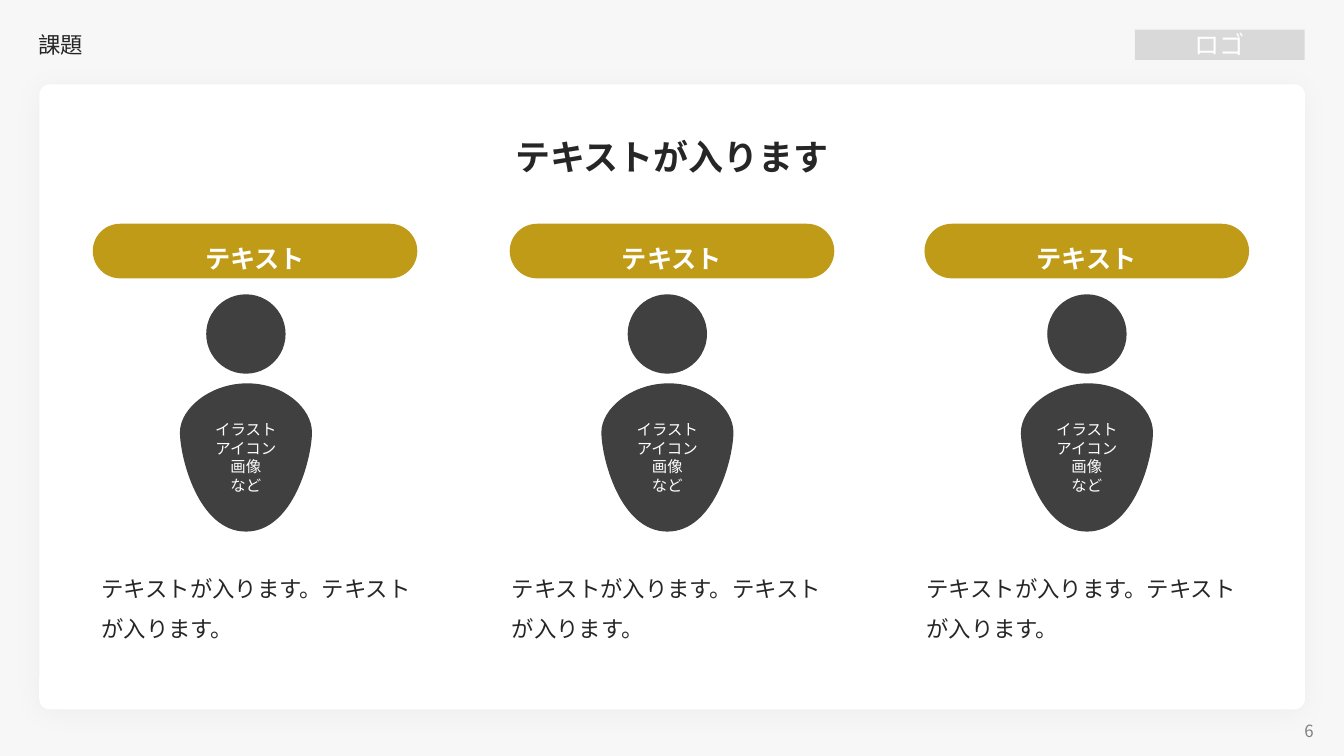
from lxml.etree import SubElement as Sub
from pptx import Presentation
from pptx.dml.color import RGBColor
from pptx.enum.shapes import MSO_SHAPE as Shape
from pptx.enum.text import MSO_ANCHOR as Anchor, PP_ALIGN as Align
from pptx.oxml.ns import qn
from pptx.util import Inches, Pt

# Grid of 160 columns by 90 rows on a 13.33 x 7.5 inch slide
COLS, ROWS = 160, 90
CELL = Inches(7.5) / ROWS

BACK = RGBColor(0xF7, 0xF7, 0xF7)
WHITE = RGBColor(0xFF, 0xFF, 0xFF)
PALE = RGBColor(0xD9, 0xD9, 0xD9)
GREY = RGBColor(0x80, 0x80, 0x80)
DARK = RGBColor(0x40, 0x40, 0x40)
INK = RGBColor(0x26, 0x26, 0x26)
GOLD = RGBColor(0xC0, 0x9B, 0x17)
SANS, LATO = "Noto Sans CJK JP", "Lato"

# Torso outline as shares of its upright box: start, then Bezier segments
START = (0.51, 0)
CURVES = [
    ((0.79, 0), (1, 0.17), (1, 0.33)),
    ((1, 0.5), (0.86, 1), (0.5, 1)),
    ((0.14, 1), (0, 0.5), (0, 0.33)),
    ((0, 0.17), (0.23, 0), START),
]


def grid(*cells):
    return [round(c * CELL) for c in cells]


def paint(shape, color):
    shape.shadow.inherit = False
    shape.fill.solid()
    shape.fill.fore_color.rgb = color
    shape.line.fill.background()


def block(parent, kind, box, color, round_by=None):
    shape = parent.shapes.add_shape(kind, *grid(*box))
    if round_by is not None:
        shape.adjustments[0] = round_by
    paint(shape, color)
    return shape


def write(shape, text, size, color, align=Align.CENTER, font=SANS,
          bold=False, space=None, anchor=Anchor.MIDDLE):
    frame = shape.text_frame
    frame.text = text
    frame.word_wrap = True
    frame.vertical_anchor = anchor
    for para in frame.paragraphs:
        para.alignment = align
        if space:
            para.line_spacing = space
        for run in para.runs:
            face = run.font
            face.size, face.bold, face.name = Pt(size), bold, font
            face.color.rgb = color
            Sub(run._r.get_or_add_rPr(), qn("a:ea"), typeface=font)


def label(slide, box, text, size, color, **style):
    write(slide.shapes.add_textbox(*grid(*box)), text, size, color, **style)


def shade(shape):
    effects = shape._element.spPr.find(qn("a:effectLst"))
    shadow = Sub(effects, qn("a:outerShdw"), blurRad=str(Pt(20)),
                 dist=str(Pt(3)), dir="5400000", algn="t", rotWithShape="0")
    tint = Sub(shadow, qn("a:srgbClr"), val="000000")
    Sub(tint, qn("a:alpha"), val="3000")


def base(slide, box):
    """Background, card and page number."""
    x, y, w, h = box
    block(slide, Shape.ROUNDED_RECTANGLE, box, BACK, 0)
    card = block(slide, Shape.ROUNDED_RECTANGLE,
                 (x + 4.68, y + 10.05, w - 9.32, h - 15.6), WHITE, 0.017)
    shade(card)
    label(slide, (x + w - 39.76, y + h - 4.38, 37.32, 2.88), "6", 12, GREY,
          align=Align.RIGHT)


def header(slide, box):
    """Section name at the left, logo block at the right."""
    x, y, w, h = box
    logo = block(slide, Shape.RECTANGLE, (x + w - 20.2, y + 0.53, 20.2, 3.6), PALE)
    write(logo, "ロゴ", 18, WHITE)
    label(slide, (x, y, 120, h), "課題", 16, INK, align=Align.LEFT, space=0.9)


def torso(group, box):
    """Curved outline lying on its side, turned upright with its text."""
    x, y, w, h = box
    left, top = x + (w - h) / 2, y + (h - w) / 2

    def turn(point):
        return h * point[1], w * (1 - point[0])

    def spot(point):
        across, down = turn(point)
        return grid(left + across, top + down)

    pen = group.shapes.build_freeform(*spot(START))
    pen.add_line_segments([spot(curve[-1]) for curve in CURVES], close=True)
    shape = pen.convert_to_shape()
    # Bend each straight side into its Bezier segment
    for side, curve in zip(list(shape._element.iter(qn("a:lnTo"))), CURVES):
        side.tag = qn("a:cubicBezTo")
        side.clear()
        for point in curve:
            px, py = grid(*turn(point))
            Sub(side, qn("a:pt"), x=str(px), y=str(py))
    shape.rotation = 90
    paint(shape, DARK)
    write(shape, "イラスト\nアイコン\n画像\nなど", 11, WHITE, font=LATO)
    shape.text_frame._txBody.bodyPr.set("vert", "vert270")


def person(slide, box):
    """Head and torso, grouped and centred in the box."""
    x, y, w, h = box
    head, drop = 9.45, 10.6
    group = slide.shapes.add_group_shape()
    block(group, Shape.OVAL, (x + (w - head) / 2, y, head, head), DARK)
    torso(group, (x, y + drop, w, h - drop))


def column(slide, box, shift, indent):
    """Pill, figure and note; the last two are moved sideways."""
    x, y, w, h = box
    pill = block(slide, Shape.ROUNDED_RECTANGLE, (x, y, w, 6.5), GOLD, 0.5)
    write(pill, "テキスト", 18, WHITE, bold=True, space=1.5)
    wide = 15.72
    person(slide, (x + (w - wide) / 2 + shift, y + 8.4, wide, 28.25))
    label(slide, (x + indent, y + h - 10.5, 40.44, 10.5),
          "テキストが入ります。テキストが入ります。", 16, INK,
          align=Align.LEFT, space=1.5, anchor=Anchor.TOP)


def main():
    deck = Presentation()
    deck.slide_width, deck.slide_height = grid(COLS, ROWS)
    slide = deck.slides.add_slide(deck.slide_layouts[6])
    base(slide, (0, 0, COLS, ROWS))
    header(slide, (3.36, 3, 151.95, 4.92))
    label(slide, (14.28, 15.54, 131.4, 6.24), "テキストが入ります", 25, INK,
          bold=True, anchor=Anchor.TOP)
    for x, shift, indent in [(11.04, -1.08, -0.12), (60.68, -0.55, -0.92),
                             (110.06, 0.02, -0.92)]:
        column(slide, (x, 26.64, 38.64, 50.1), shift, indent)
    deck.save("out.pptx")


if __name__ == "__main__":
    main()
